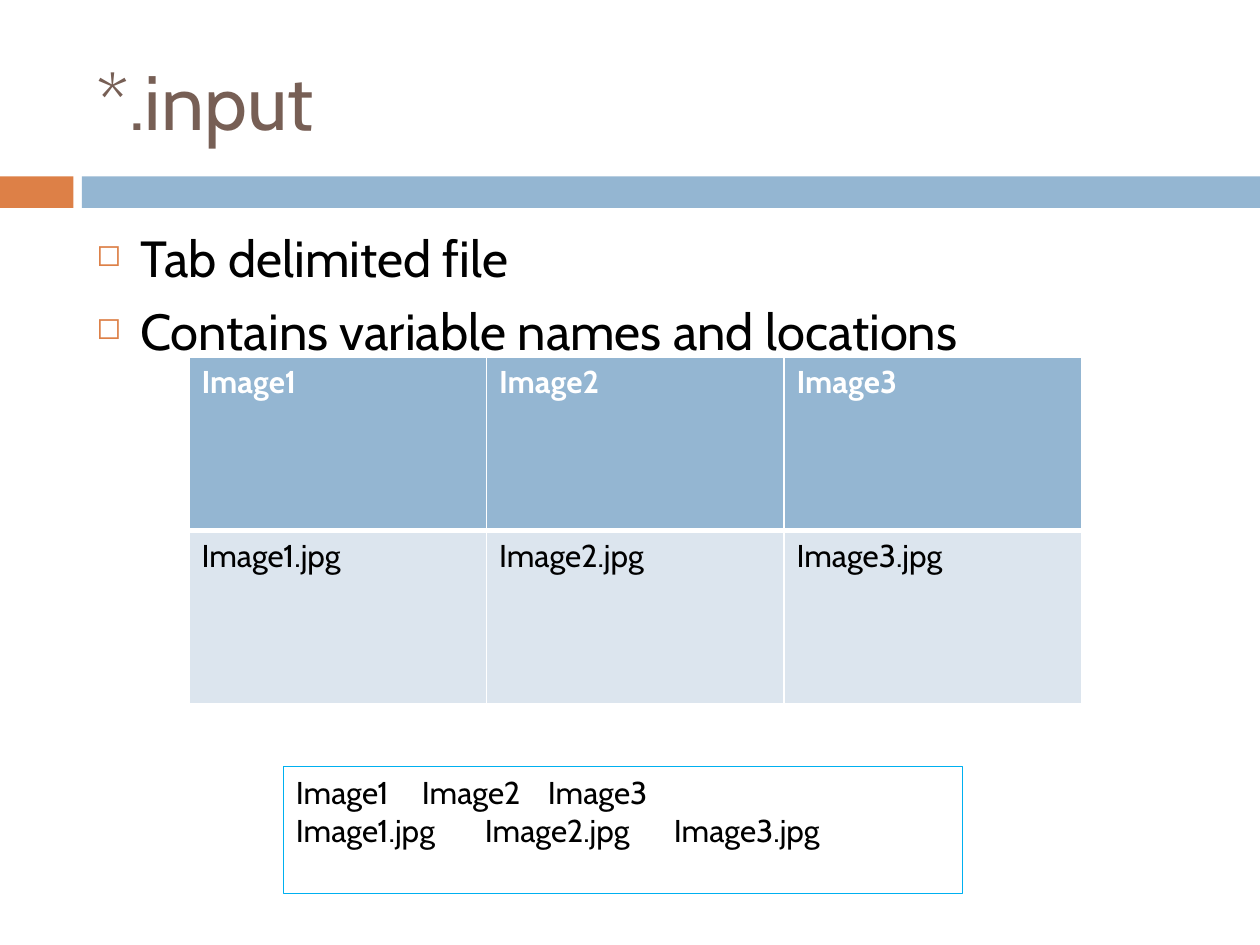
from lxml import etree
from pptx import Presentation, util as u
from pptx.dml.color import RGBColor
from pptx.enum import shapes, text
from pptx.oxml import ns

BLUE = RGBColor(0x94, 0xB6, 0xD2)
PALE_BLUE = RGBColor(0xDC, 0xE5, 0xEE)
CYAN = RGBColor(0x00, 0xB0, 0xF0)
ORANGE = RGBColor(0xDD, 0x80, 0x47)
BROWN = RGBColor(0x77, 0x5F, 0x55)
BLACK = RGBColor(0, 0, 0)
WHITE = RGBColor(0xFF, 0xFF, 0xFF)


class SlideBuilder:
    """Draws styled elements on a slide with a grid of 120 columns and 90 rows."""

    font = "Cabin"
    columns, rows = 120, 90

    def __init__(self, presentation):
        self.column = presentation.slide_width / self.columns
        self.row = presentation.slide_height / self.rows
        self.slide = presentation.slides.add_slide(presentation.slide_layouts[6])

    def place(self, left, top, width, height):
        return (round(left * self.column), round(top * self.row),
                round(width * self.column), round(height * self.row))

    def add_run(self, paragraph, words, size, color, bold=False):
        run = paragraph.add_run()
        run.text = words
        run.font.name = self.font
        run.font.size = u.Pt(size)
        run.font.bold = bold
        run.font.color.rgb = color

    def bar(self, box, color):
        shape = self.slide.shapes.add_shape(shapes.MSO_SHAPE.RECTANGLE, *self.place(*box))
        shape.shadow.inherit = False
        shape.fill.solid()
        shape.fill.fore_color.rgb = color
        shape.line.fill.background()

    def text_box(self, box, lines, size, color, anchor=text.MSO_ANCHOR.TOP):
        shape = self.slide.shapes.add_textbox(*self.place(*box))
        frame = shape.text_frame
        frame.word_wrap = True
        frame.auto_size = text.MSO_AUTO_SIZE.NONE
        frame.vertical_anchor = anchor
        for index, line in enumerate(lines):
            paragraph = frame.add_paragraph() if index else frame.paragraphs[0]
            self.add_run(paragraph, line, size, color)
        return shape

    def bullet_list(self, box, lines, size, color, bullet_color):
        shape = self.text_box(box, lines, size, color)
        for paragraph in shape.text_frame.paragraphs:
            paragraph.space_before = u.Pt(7)
            properties = paragraph._p.get_or_add_pPr()
            properties.set("marL", str(u.Inches(0.35)))
            properties.set("indent", str(-u.Inches(0.35)))
            bullet = etree.SubElement(properties, ns.qn("a:buClr"))
            etree.SubElement(bullet, ns.qn("a:srgbClr"), val=str(bullet_color))
            etree.SubElement(properties, ns.qn("a:buSzPct"), val="60000")
            etree.SubElement(properties, ns.qn("a:buChar"), char="◻")

    def outlined_box(self, box, lines, size, color, line_color):
        shape = self.text_box(box, lines, size, color)
        shape.line.color.rgb = line_color
        shape.line.width = u.Pt(0.75)

    def border(self, cell, side, width):
        properties = cell._tc.get_or_add_tcPr()
        line = etree.Element(ns.qn(f"a:ln{side}"), w=str(u.Pt(width)))
        fill = etree.SubElement(line, ns.qn("a:solidFill"))
        etree.SubElement(fill, ns.qn("a:srgbClr"), val=str(WHITE))
        properties.insert("LRTB".index(side), line)

    def table(self, box, records, size):
        frame = self.slide.shapes.add_table(len(records), len(records[0]), *self.place(*box))
        last = len(records) - 1
        for row, record in enumerate(records):
            header = row == 0
            for column, words in enumerate(record):
                cell = frame.table.cell(row, column)
                cell.fill.solid()
                cell.fill.fore_color.rgb = BLUE if header else PALE_BLUE
                self.add_run(cell.text_frame.paragraphs[0], words, size,
                             WHITE if header else BLACK, header)
                widths = {"L": 1, "R": 1, "T": 1 if header else 3, "B": 1 if row == last else 3}
                for side, width in widths.items():
                    self.border(cell, side, width)


def main():
    presentation = Presentation()
    presentation.slide_width = u.Inches(10)
    presentation.slide_height = u.Inches(7.5)
    builder = SlideBuilder(presentation)

    names = ["Image1", "Image2", "Image3"]
    records = [names, [f"{name}.jpg" for name in names]]

    builder.bar((0, 16.8, 7, 3), ORANGE)
    builder.bar((7.8, 16.8, 112.2, 3), BLUE)
    builder.text_box((8, 3, 107, 13), ["*.input"], 44, BROWN, text.MSO_ANCHOR.MIDDLE)
    builder.bullet_list((8, 21, 107, 59),
                        ["Tab delimited file", "Contains variable names and locations"],
                        29, BLACK, ORANGE)
    builder.table((18, 34, 85, 33), records, 18)
    builder.outlined_box((27, 73, 64.7, 12.1), ["\t".join(record) for record in records],
                         18, BLACK, CYAN)
    presentation.save("out.pptx")


if __name__ == "__main__":
    main()
